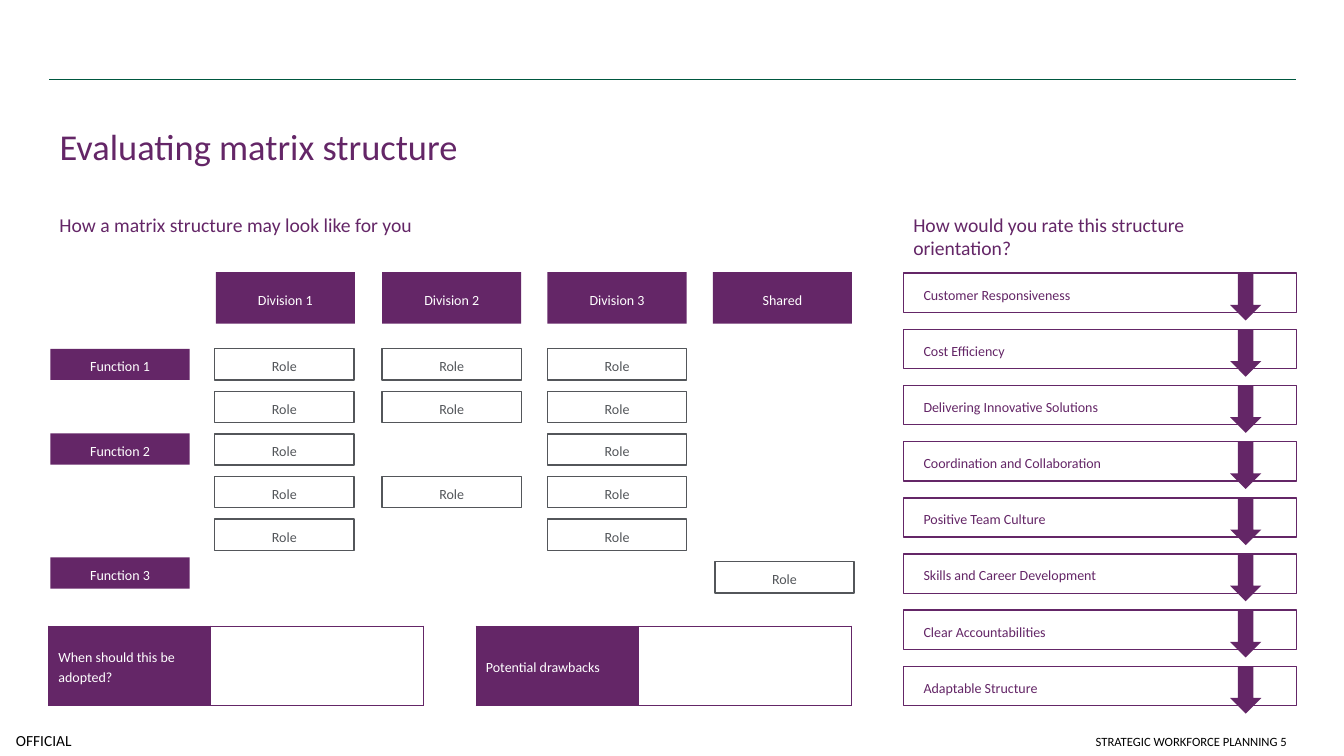
from lxml import etree
from pptx import Presentation
from pptx.dml.color import RGBColor
from pptx.enum.shapes import MSO_CONNECTOR, MSO_SHAPE
from pptx.enum.text import MSO_ANCHOR, MSO_AUTO_SIZE, PP_ALIGN
from pptx.oxml import parse_xml
from pptx.oxml.ns import nsdecls, qn
from pptx.util import Inches, Pt

PURPLE = RGBColor(0x64, 0x26, 0x67)
GREEN = RGBColor(0x00, 0x57, 0x3F)
GREY = RGBColor(0x53, 0x56, 0x5A)
WHITE = RGBColor(0xFF, 0xFF, 0xFF)
BLACK = RGBColor(0x00, 0x00, 0x00)


def write(tf, text, size, color, align=PP_ALIGN.LEFT, anchor=MSO_ANCHOR.MIDDLE,
          insets=(0.1, 0.05, 0.1, 0.05), spacing=1.0, after=0):
    """Put one formatted paragraph in a text frame; insets run left, top, right, bottom."""
    tf.word_wrap = True
    tf.auto_size = MSO_AUTO_SIZE.NONE
    tf.vertical_anchor = anchor
    tf.margin_left, tf.margin_top, tf.margin_right, tf.margin_bottom = map(Inches, insets)
    p = tf.paragraphs[0]
    p.alignment = align
    p.line_spacing = spacing
    p.space_after = Pt(after)
    r = p.add_run()
    r.text = text
    r.font.name = "Calibri"
    r.font.size = Pt(size)
    r.font.color.rgb = color


def add_box(kind, left, top, width, height, fill, line=None, text="", color=WHITE,
            align=PP_ALIGN.CENTER, inset=0):
    sp = slide.shapes.add_shape(kind, Inches(left), Inches(top), Inches(width), Inches(height))
    sp.shadow.inherit = False
    sp.fill.solid()
    sp.fill.fore_color.rgb = fill
    if line is None:
        sp.line.fill.background()
    else:
        sp.line.color.rgb = line
        sp.line.width = Pt(1)
    if text:
        write(sp.text_frame, text, 10, color, align, insets=(inset, 0, 0, 0),
              spacing=1.2, after=9)


prs = Presentation()
prs.slide_width = Inches(13.33)
prs.slide_height = Inches(7.5)
slide = prs.slides.add_slide(prs.slide_layouts[5])

# Header rule and title
rule = slide.shapes.add_connector(MSO_CONNECTOR.STRAIGHT, Inches(0.49), Inches(0.79),
                                  Inches(12.85), Inches(0.79))
rule.line.color.rgb = GREEN
rule.line.width = Pt(1)
etree.SubElement(rule._element.spPr, qn("a:effectLst"))

title = slide.shapes.title
title.left, title.top = Inches(0.49), Inches(0.89)
title.width, title.height = Inches(12.35), Inches(1.02)
write(title.text_frame, "Evaluating matrix structure", 26, PURPLE, spacing=1.2)

# Section headings and footers
NO_INSETS = (0, 0, 0, 0)
INSETS = (0.1, 0.05, 0.1, 0.05)
labels = [
    ("How a matrix structure may look like for you", 0.49, 2.06, 8.46, 0.91,
     14, PURPLE, PP_ALIGN.LEFT, MSO_ANCHOR.TOP, INSETS),
    ("How would you rate this structure orientation?", 8.96, 2.06, 3.9, 0.64,
     14, PURPLE, PP_ALIGN.LEFT, MSO_ANCHOR.TOP, INSETS),
    ("OFFICIAL", 0, 7.19, 0.87, 0.31,
     11, BLACK, PP_ALIGN.CENTER, MSO_ANCHOR.MIDDLE, NO_INSETS),
    ("STRATEGIC WORKFORCE PLANNING 5", 6.84, 7.09, 6.02, 0.39,
     9, BLACK, PP_ALIGN.RIGHT, MSO_ANCHOR.BOTTOM, INSETS),
]
for text, left, top, width, height, size, color, align, anchor, insets in labels:
    tb = slide.shapes.add_textbox(Inches(left), Inches(top), Inches(width), Inches(height))
    write(tb.text_frame, text, size, color, align, anchor, insets)

# Matrix: division headers, function labels and the rows that hold a role
BOX_W, BOX_H = 1.38, 0.31
ROW_TOP, ROW_STEP = 3.46, 0.4225
divisions = [
    ("Division 1", 2.14, 2.13, [0, 1, 2, 3, 4]),
    ("Division 2", 3.79, 3.79, [0, 1, 3]),
    ("Division 3", 5.43, 5.43, [0, 1, 2, 3, 4]),
    ("Shared", 7.07, 7.09, [5]),
]
for name, header_left, role_left, rows in divisions:
    add_box(MSO_SHAPE.RECTANGLE, header_left, 2.7, BOX_W, 0.51, PURPLE, text=name)
    for row in rows:
        add_box(MSO_SHAPE.RECTANGLE, role_left, ROW_TOP + row * ROW_STEP, BOX_W, BOX_H,
                WHITE, GREY, "Role", GREY)
for name, top in [("Function 1", 3.46), ("Function 2", 4.3), ("Function 3", 5.53)]:
    add_box(MSO_SHAPE.RECTANGLE, 0.5, top, BOX_W, BOX_H, PURPLE, text=name)

# Question tables
for left, question in [(0.48, "When should this be adopted?"), (4.72, "Potential drawbacks")]:
    table = slide.shapes.add_table(1, 2, Inches(left), Inches(6.21),
                                   Inches(3.72), Inches(0.79)).table
    table.first_row = False
    table.horz_banding = False
    table.columns[0].width = Inches(1.61)
    table.columns[1].width = Inches(2.11)
    for cell, fill in zip(table.rows[0].cells, (PURPLE, WHITE)):
        cell.fill.solid()
        cell.fill.fore_color.rgb = fill
        cell.vertical_anchor = MSO_ANCHOR.MIDDLE
        tcPr = cell._tc.get_or_add_tcPr()
        for i, side in enumerate(("lnL", "lnR", "lnT", "lnB")):
            tcPr.insert(i, parse_xml(
                f'<a:{side} {nsdecls("a")} w="{Pt(0.5)}"><a:solidFill>'
                f'<a:srgbClr val="{PURPLE}"/></a:solidFill></a:{side}>'))
    p = table.cell(0, 0).text_frame.paragraphs[0]
    p.line_spacing = 1.2
    r = p.add_run()
    r.text = question
    r.font.name = "Calibri"
    r.font.size = Pt(10)
    r.font.color.rgb = WHITE

# Rating criteria with their arrows
criteria = ["Customer Responsiveness", "Cost Efficiency", "Delivering Innovative Solutions",
            "Coordination and Collaboration", "Positive Team Culture",
            "Skills and Career Development", "Clear Accountabilities", "Adaptable Structure"]
for i, criterion in enumerate(criteria):
    top = 2.71 + i * 3.9 / 7
    add_box(MSO_SHAPE.RECTANGLE, 8.96, top, 3.9, 0.39, WHITE, PURPLE, criterion, PURPLE,
            PP_ALIGN.LEFT, inset=0.2)
    add_box(MSO_SHAPE.DOWN_ARROW, 12.2, top, 0.31, 0.47, PURPLE)

prs.save("out.pptx")
